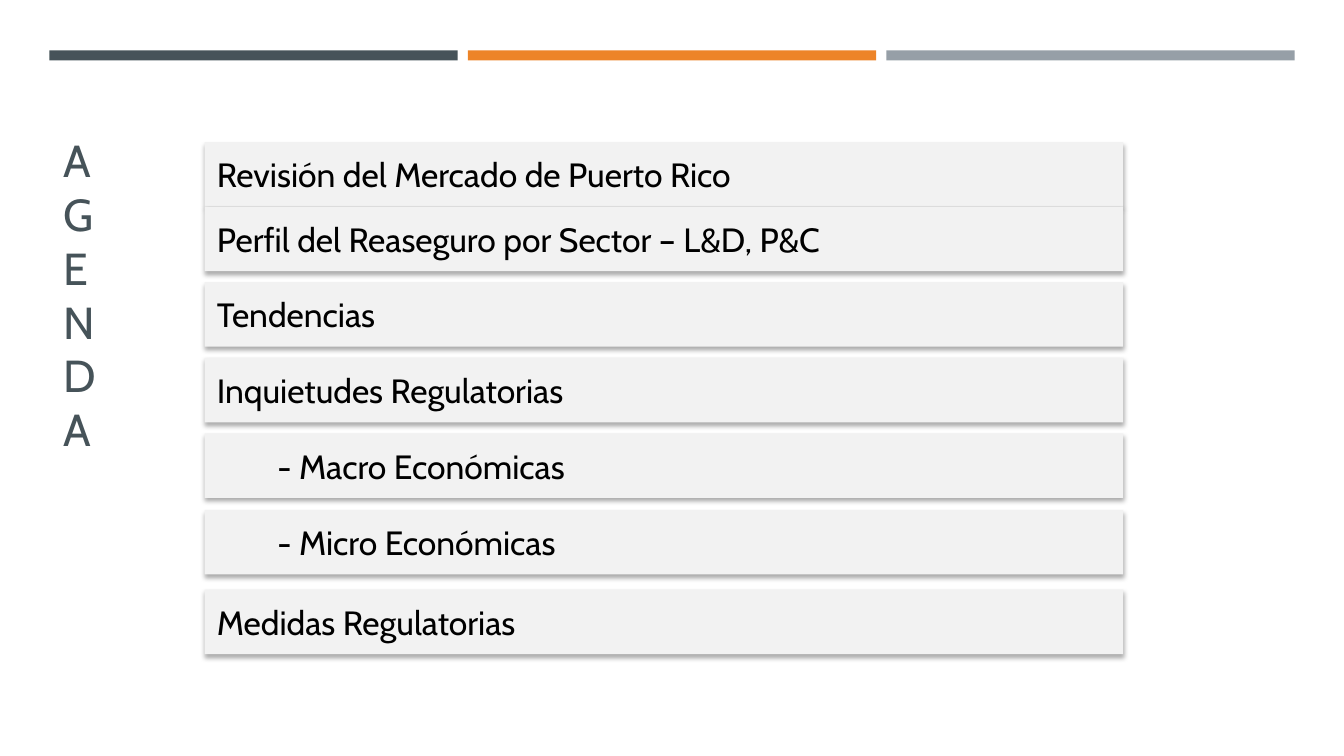
from dataclasses import dataclass

from lxml import etree
from pptx import Presentation
from pptx.dml.color import RGBColor
from pptx.enum.shapes import MSO_SHAPE
from pptx.enum.text import MSO_ANCHOR, MSO_AUTO_SIZE, PP_ALIGN
from pptx.oxml.ns import qn
from pptx.util import Inches, Pt

RECTANGLE = MSO_SHAPE.RECTANGLE
BOTTOM, MIDDLE = MSO_ANCHOR.BOTTOM, MSO_ANCHOR.MIDDLE
LEFT = PP_ALIGN.LEFT
NO_AUTOFIT = MSO_AUTO_SIZE.NONE
TITLE_ONLY = 5


@dataclass(frozen=True)
class Theme:
    font: str = "Cabin"
    slate: str = "465359"
    orange: str = "ED8428"
    grey: str = "969FA7"
    panel: str = "F2F2F2"
    ink: str = "000000"
    title_size: int = 32
    item_size: int = 24


THEME = Theme()

# Text, top relative to the list, left indent
AGENDA_ITEMS = [
    ("Revisión del Mercado de Puerto Rico", 0, 0),
    ("Perfil del Reaseguro por Sector – L&D, P&C", 0.64, 0),
    ("Tendencias", 1.39, 0),
    ("Inquietudes Regulatorias", 2.14, 0),
    ("- Macro Económicas", 2.89, 0.6),
    ("- Micro Económicas", 3.65, 0.6),
    ("Medidas Regulatorias", 4.44, 0),
]


def set_font(para, size, color):
    para.font.name = THEME.font
    para.font.size = Pt(size)
    para.font.color.rgb = RGBColor.from_string(color)


def add_rectangle(page, left, top, width, height, color):
    box = page.shapes.add_shape(
        RECTANGLE, Inches(left), Inches(top), Inches(width), Inches(height))
    box.shadow.inherit = False
    box.fill.solid()
    box.fill.fore_color.rgb = RGBColor.from_string(color)
    box.line.fill.background()
    return box


def add_soft_shadow(box):
    effects = box.element.spPr.find(qn("a:effectLst"))
    shadow = etree.SubElement(
        effects, qn("a:outerShdw"), blurRad=str(Pt(3.5)), dist=str(Pt(2.2)),
        dir="5400000", algn="t", rotWithShape="0")
    color = etree.SubElement(shadow, qn("a:srgbClr"), val=THEME.ink)
    etree.SubElement(color, qn("a:alpha"), val="32000")


def add_top_bars(page, left, top, width, height, gap=0.1):
    colors = [THEME.slate, THEME.orange, THEME.grey]
    bar_width = (width - gap * (len(colors) - 1)) / len(colors)
    for index, color in enumerate(colors):
        add_rectangle(page, left + index * (bar_width + gap), top,
                      bar_width, height, color)


def place_title(page, left, top, width, height):
    title = page.shapes.title
    title.left, title.top = Inches(left), Inches(top)
    title.width, title.height = Inches(width), Inches(height)
    frame = title.text_frame
    frame.text = "AGENDA"
    frame.auto_size = NO_AUTOFIT
    frame.vertical_anchor = BOTTOM
    # Stack the letters upright
    frame._txBody.bodyPr.set("vert", "wordArtVert")
    para = frame.paragraphs[0]
    para.alignment = LEFT
    set_font(para, THEME.title_size, THEME.slate)


def add_agenda_list(page, left, top, width, row_height):
    for text, offset, indent in AGENDA_ITEMS:
        row = add_rectangle(page, left, top + offset, width, row_height, THEME.panel)
        add_soft_shadow(row)
        frame = row.text_frame
        frame.word_wrap = True
        frame.vertical_anchor = MIDDLE
        frame.margin_left = frame.margin_right = Inches(0.12)
        frame.margin_top = frame.margin_bottom = Inches(0.12)
        para = frame.paragraphs[0]
        para.text = text
        para.alignment = LEFT
        if indent:
            para._p.get_or_add_pPr().set("marL", str(Inches(indent)))
        set_font(para, THEME.item_size, THEME.ink)


def build_agenda_slide(deck):
    page = deck.slides.add_slide(deck.slide_layouts[TITLE_ONLY])
    add_top_bars(page, 0.49, 0.5, 12.35, 0.1)
    place_title(page, 0.53, 1.27, 0.71, 4.77)
    add_agenda_list(page, 2.03, 1.41, 9.11, 0.64)


def main():
    deck = Presentation()
    deck.slide_width, deck.slide_height = Inches(13.33), Inches(7.5)
    build_agenda_slide(deck)
    deck.save("out.pptx")


if __name__ == "__main__":
    main()
